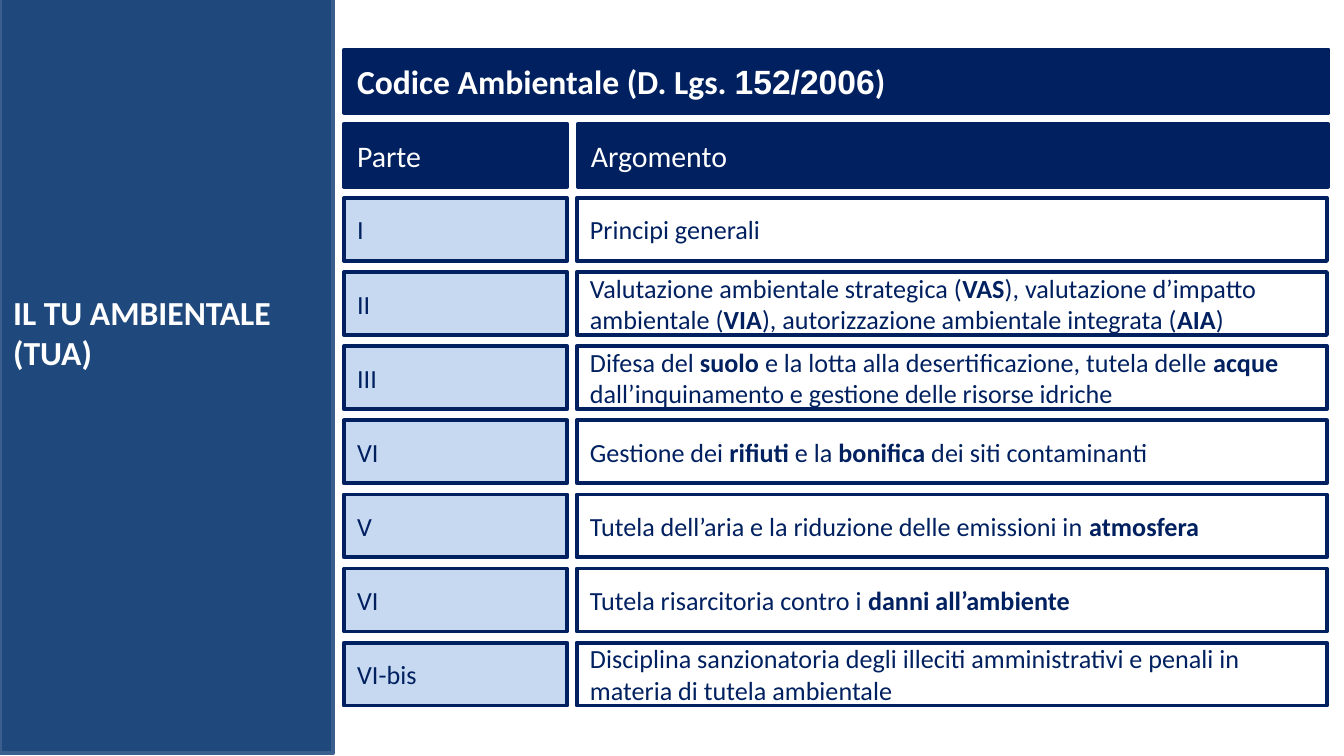
from pptx import Presentation
from pptx.dml.color import RGBColor
from pptx.enum.shapes import MSO_SHAPE
from pptx.enum.text import MSO_ANCHOR, PP_ALIGN
from pptx.util import Cm, Pt

RECTANGLE = MSO_SHAPE.RECTANGLE
MIDDLE = MSO_ANCHOR.MIDDLE
LEFT = PP_ALIGN.LEFT

WHITE = RGBColor(0xFF, 0xFF, 0xFF)
NAVY = RGBColor(0x00, 0x20, 0x60)
PALE_BLUE = RGBColor(0xC6, 0xD9, 0xF1)
PANEL_BLUE = RGBColor(0x1F, 0x49, 0x7D)
PANEL_EDGE = RGBColor(0x3A, 0x5F, 0x8C)


def add_box(left, top, width, height, fill, line=NAVY):
    box = page.shapes.add_shape(RECTANGLE, Cm(left), Cm(top), Cm(width), Cm(height))
    box.shadow.inherit = False
    box.fill.solid()
    box.fill.fore_color.rgb = fill
    box.line.color.rgb = line
    box.line.width = Pt(2)
    box.text_frame.vertical_anchor = MIDDLE
    return box


def write(box, text, size=14, color=NAVY, bold=False, marked_font="Calibri"):
    """Pieces between bars are marked: bold, and set in marked_font."""
    box.text_frame.word_wrap = True
    para = box.text_frame.paragraphs[0]
    para.alignment = LEFT
    for index, piece in enumerate(text.split("|")):
        if not piece:
            continue
        marked = index % 2 == 1
        span = para.add_run()
        span.text = piece
        span.font.name = marked_font if marked else "Calibri"
        span.font.size = Pt(size)
        span.font.bold = bold or marked
        span.font.color.rgb = color


deck = Presentation()
deck.slide_width, deck.slide_height = Cm(25.4), Cm(14.28)
page = deck.slides.add_slide(deck.slide_layouts[6])

# Side panel with the slide title
add_box(0, -0.05, 6.3, 14.28, PANEL_BLUE, PANEL_EDGE)
title = page.shapes.add_textbox(Cm(0), Cm(5.38), Cm(6.5), Cm(2.57))
write(title, "IL TU AMBIENTALE (TUA)", size=18, color=WHITE, bold=True)

# Grid of the code's parts
TOP, PITCH, ROW_HEIGHT = 0.94, 1.4, 1.19
PART_LEFT, PART_WIDTH = 6.5, 4.22
TOPIC_LEFT, TOPIC_WIDTH = 10.9, 14.18

# Heading bars
heading = add_box(PART_LEFT, TOP, 18.61, ROW_HEIGHT, NAVY)
write(heading, "Codice Ambientale (D. Lgs. |152/2006|)", size=18, color=WHITE,
      bold=True, marked_font="Arial")
for left, width, label in [(PART_LEFT, PART_WIDTH, "Parte"),
                           (TOPIC_LEFT + 0.02, TOPIC_WIDTH, "Argomento")]:
    header = add_box(left, TOP + PITCH, width, ROW_HEIGHT, NAVY)
    write(header, label, size=16, color=WHITE)

# One row for each part
rows = [
    ("I", "Principi generali"),
    ("II", "Valutazione ambientale strategica (|VAS|), valutazione d’impatto "
           "ambientale (|VIA|), autorizzazione ambientale integrata (|AIA|)"),
    ("III", "Difesa del |suolo |e la lotta alla desertificazione, tutela delle "
            "|acque| dall’inquinamento e gestione delle risorse idriche"),
    ("VI", "Gestione dei |rifiuti| e la |bonifica| dei siti contaminanti"),
    ("V", "Tutela dell’aria e la riduzione delle emissioni in |atmosfera|"),
    ("VI", "Tutela risarcitoria contro i |danni all’ambiente|"),
    ("VI-bis", "Disciplina sanzionatoria degli illeciti amministrativi e penali "
               "in materia di tutela ambientale"),
]
for number, (part, topic) in enumerate(rows, start=2):
    top = TOP + number * PITCH
    write(add_box(PART_LEFT, top, PART_WIDTH, ROW_HEIGHT, PALE_BLUE), part)
    write(add_box(TOPIC_LEFT, top, TOPIC_WIDTH, ROW_HEIGHT, WHITE), topic)

deck.save("out.pptx")
